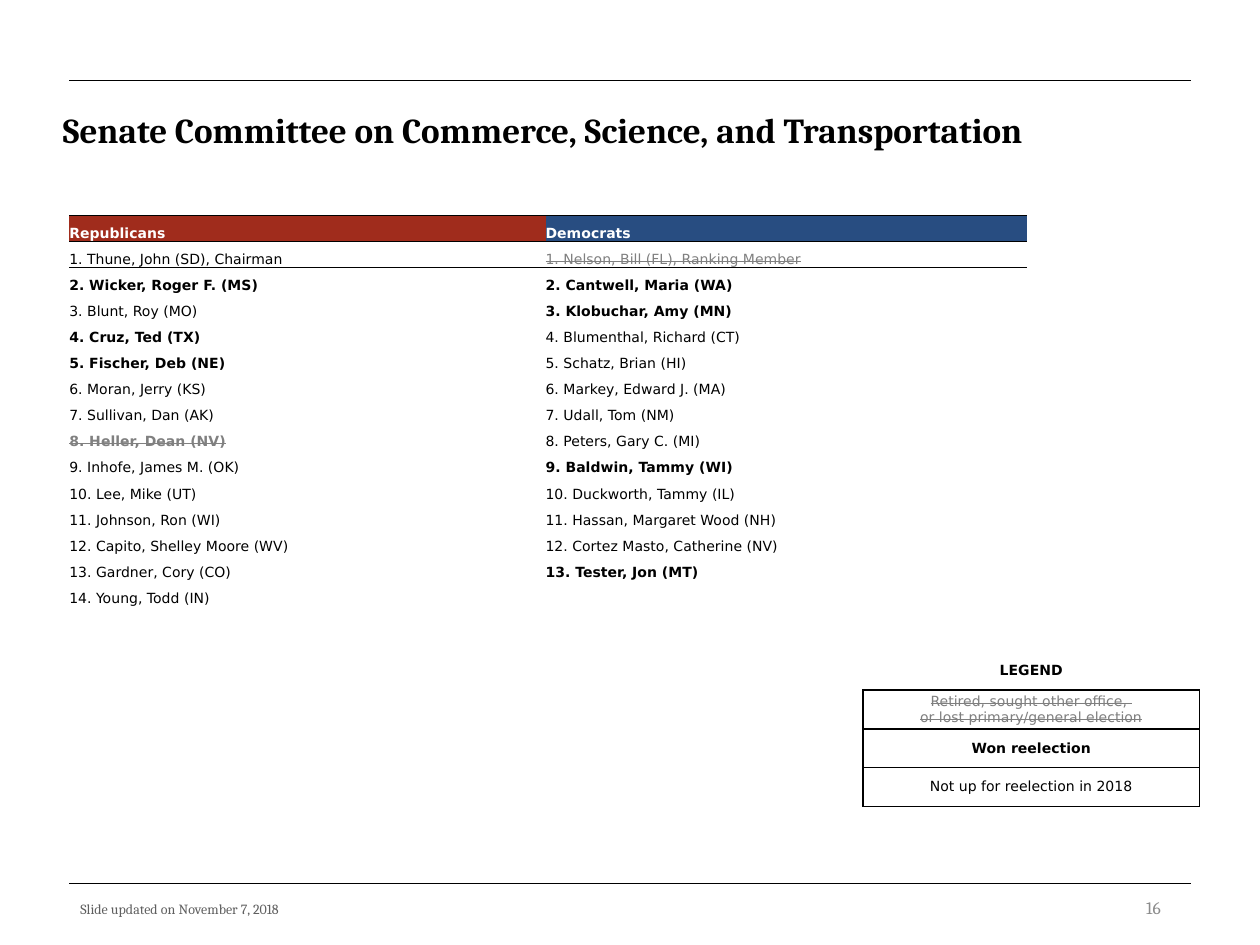
import itertools
import pptx
import pptx.util
import pptx.dml.color
import pptx.enum.shapes
import pptx.enum.text
import pptx.oxml
import pptx.oxml.ns
import lxml.etree

Pt = pptx.util.Pt
RGBColor = pptx.dml.color.RGBColor
qn = pptx.oxml.ns.qn
PP_ALIGN = pptx.enum.text.PP_ALIGN
MSO_ANCHOR = pptx.enum.text.MSO_ANCHOR

BLACK = RGBColor(0x00, 0x00, 0x00)
WHITE = RGBColor(0xFF, 0xFF, 0xFF)
RED = RGBColor(0xA0, 0x2C, 0x1C)
BLUE = RGBColor(0x28, 0x4D, 0x81)
GRAY = RGBColor(0x80, 0x80, 0x80)
LEGEND_GRAY = RGBColor(0x7F, 0x7F, 0x7F)
NOTE_GRAY = RGBColor(0x5F, 0x5F, 0x5F)
NUMBER_GRAY = RGBColor(0x8C, 0x8C, 0x8C)
NO_STYLE = "{2D5ABB26-0587-4C30-8999-92F81FD0307C}"

HEAD = dict(color=WHITE, bold=True)
STAYS = dict(color=BLACK, bold=False)
WON = dict(color=BLACK, bold=True)
LOST = dict(color=GRAY, bold=False, strike=True)
LOST_BOLD = dict(LOST, bold=True)

republicans = [
    ("Thune, John (SD), Chairman", STAYS), ("Wicker, Roger F. (MS)", WON),
    ("Blunt, Roy (MO)", STAYS), ("Cruz, Ted (TX)", WON),
    ("Fischer, Deb (NE)", WON), ("Moran, Jerry (KS)", STAYS),
    ("Sullivan, Dan (AK)", STAYS), ("Heller, Dean (NV)", LOST_BOLD),
    ("Inhofe, James M. (OK)", STAYS), ("Lee, Mike (UT)", STAYS),
    ("Johnson, Ron (WI)", STAYS), ("Capito, Shelley Moore (WV)", STAYS),
    ("Gardner, Cory (CO)", STAYS), ("Young, Todd (IN)", STAYS),
]
democrats = [
    ("Nelson, Bill (FL), Ranking Member", LOST), ("Cantwell, Maria (WA)", WON),
    ("Klobuchar, Amy (MN)", WON), ("Blumenthal, Richard (CT)", STAYS),
    ("Schatz, Brian (HI)", STAYS), ("Markey, Edward J. (MA)", STAYS),
    ("Udall, Tom (NM)", STAYS), ("Peters, Gary C. (MI)", STAYS),
    ("Baldwin, Tammy (WI)", WON), ("Duckworth, Tammy (IL)", STAYS),
    ("Hassan, Margaret Wood (NH)", STAYS), ("Cortez Masto, Catherine (NV)", STAYS),
    ("Tester, Jon (MT)", WON),
]
legend = [
    (["LEGEND"], WON, "B"),
    (["Retired, sought other office, ", "or lost primary/general election"],
     dict(LOST, color=LEGEND_GRAY), "LRTB"),
    (["Won reelection"], WON, "LRTB"),
    (["Not up for reelection in 2018"], STAYS, "LRTB"),
]


def write(tf, lines, color, bold=False, strike=False, size=8, name="DejaVu Sans", align=PP_ALIGN.LEFT):
    for i, line in enumerate(lines):
        p = tf.paragraphs[0] if i == 0 else tf.add_paragraph()
        p.alignment = align
        r = p.add_run()
        r.text = line
        for key, value in dict(size=Pt(size), name=name, bold=bold).items():
            setattr(r.font, key, value)
        r.font.color.rgb = color
        if strike:
            r._r.get_or_add_rPr().set("strike", "sngStrike")


def format_cell(cell, anchor, margin_x, margin_y, sides, width, fill=None):
    for key, value in dict(vertical_anchor=anchor, margin_left=Pt(margin_x), margin_right=Pt(margin_x),
                           margin_top=Pt(margin_y), margin_bottom=Pt(margin_y)).items():
        setattr(cell, key, value)
    tcPr = cell._tc.get_or_add_tcPr()
    for side in sides:
        ln = lxml.etree.SubElement(tcPr, qn("a:ln" + side), w=str(Pt(width)))
        solid = lxml.etree.SubElement(ln, qn("a:solidFill"))
        lxml.etree.SubElement(solid, qn("a:srgbClr"), val=str(BLACK))
    if fill is None:
        cell.fill.background()
    else:
        cell.fill.solid()
        cell.fill.fore_color.rgb = fill


prs = pptx.Presentation()
prs.slide_width, prs.slide_height = Pt(720), Pt(540)
s = prs.slides.add_slide(prs.slide_layouts[6])

for y in (504.72, 46.08):
    rule = s.shapes.add_connector(pptx.enum.shapes.MSO_CONNECTOR.STRAIGHT, Pt(39.6), Pt(y), Pt(680.4), Pt(y))
    rule.line.color.rgb = BLACK
    rule.line.width = Pt(0.5)
    lxml.etree.SubElement(rule._element.spPr, qn("a:effectLst"))

texts = [
    ((38.88, 511.2, 316.8, 17.28), MSO_ANCHOR.TOP, "Slide updated on November 7, 2018",
     dict(size=8, color=NOTE_GRAY)),
    ((28.8, 61.2, 662.4, 50.4), MSO_ANCHOR.TOP, "Senate Committee on Commerce, Science, and Transportation",
     dict(size=20, color=BLACK, bold=True)),
    ((508.32, 508.32, 162, 20.88), MSO_ANCHOR.MIDDLE, "16",
     dict(size=10, color=NUMBER_GRAY, align=PP_ALIGN.RIGHT)),
]
for box, anchor, text, style in texts:
    tf = s.shapes.add_textbox(*map(Pt, box)).text_frame
    tf.word_wrap = True
    tf.vertical_anchor = anchor
    write(tf, [text], name="Cambria", **style)
    if style["size"] == 20:
        tf.paragraphs[0].line_spacing = 0.9

tables = []
for rows, widths, height, left, top in ((4, [192.24], 22.14, 493.2, 372.24),
                                        (15, [272.16, 275.04], 14.93, 39.6, 123.12)):
    frame = s.shapes.add_table(rows, len(widths), Pt(left), Pt(top), Pt(sum(widths)), Pt(rows * height))
    table = frame.table
    table.first_row = table.horz_banding = False
    table._tbl.tblPr.find(qn("a:tableStyleId")).text = NO_STYLE
    for column, width in zip(table.columns, widths):
        column.width = Pt(width)
    for row in table.rows:
        row.height = Pt(height)
    tables.append(table)
legend_table, member_table = tables

for i, (lines, style, sides) in enumerate(legend):
    cell = legend_table.cell(i, 0)
    format_cell(cell, MSO_ANCHOR.MIDDLE, 2.88, 1.44, sides, 1)
    write(cell.text_frame, lines, align=PP_ALIGN.CENTER, **style)

for col, (party, fill) in enumerate((("Republicans", RED), ("Democrats", BLUE))):
    cell = member_table.cell(0, col)
    format_cell(cell, MSO_ANCHOR.BOTTOM, 0, 0, "TB", 0.5, fill)
    write(cell.text_frame, [party], **HEAD)

for i, pair in enumerate(itertools.zip_longest(republicans, democrats), 1):
    for col, member in enumerate(pair):
        cell = member_table.cell(i, col)
        format_cell(cell, MSO_ANCHOR.BOTTOM, 0, 0, "T" if i == 1 else "", 0.5)
        if member:
            write(cell.text_frame, [f"{i}. {member[0]}"], **member[1])
        else:
            lxml.etree.SubElement(cell.text_frame.paragraphs[0]._p, qn("a:endParaRPr"), sz="800")

prs.save("out.pptx")
